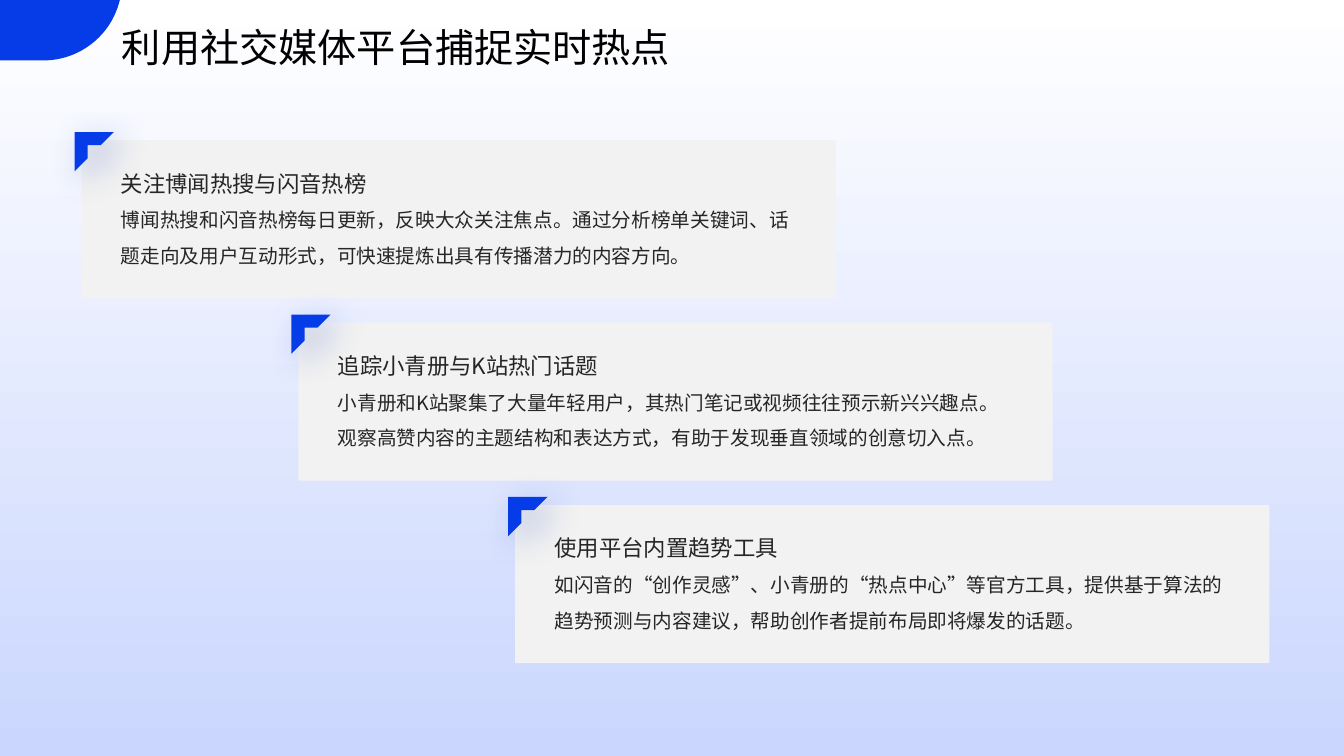
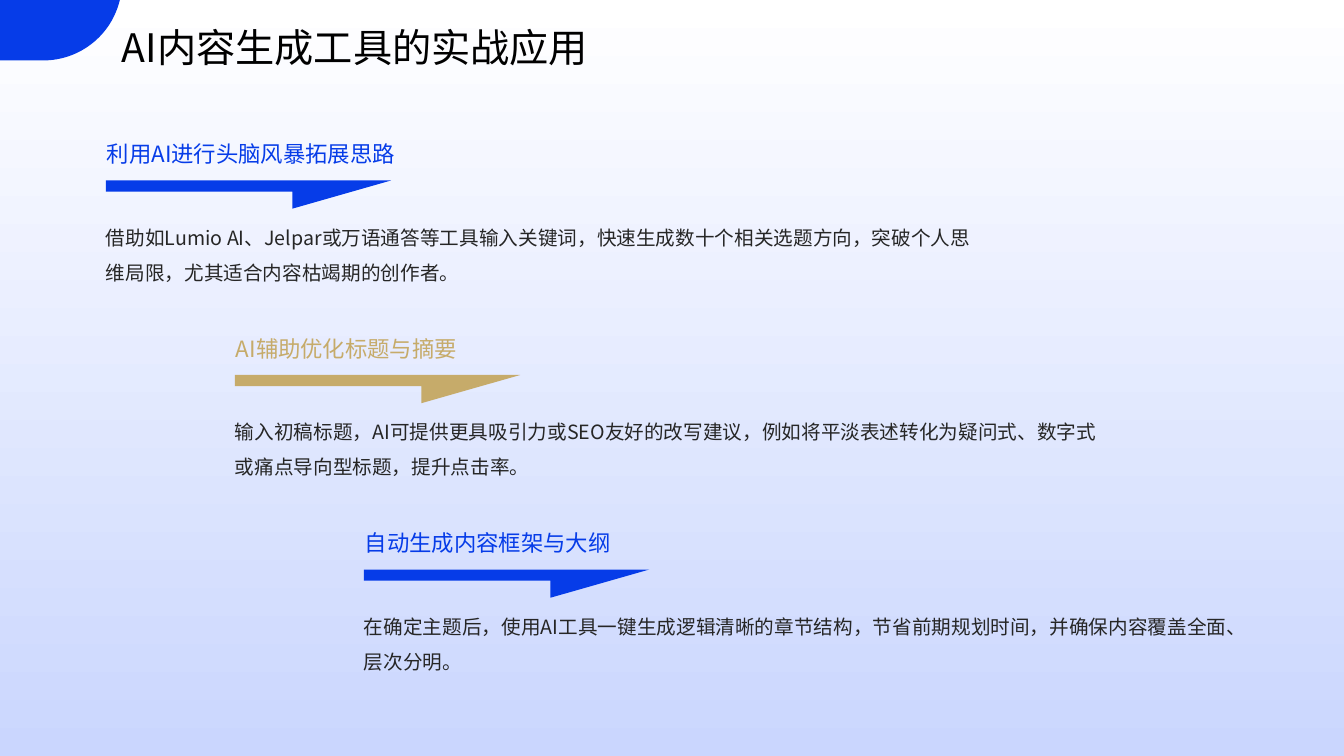
import math

import pptx
import pptx.dml.color
import pptx.enum.shapes
import pptx.enum.text
import pptx.util
from lxml import etree
from pptx.oxml.ns import qn

Inches = pptx.util.Inches
Pt = pptx.util.Pt
Anchor = pptx.enum.text.MSO_ANCHOR
Shape = pptx.enum.shapes.MSO_SHAPE

FONT = "Noto Sans CJK SC"
COLORS = {
    "blue": "063CE8",
    "gold": "C6AB6A",
    "card": "F2F2F2",
    "text": "262626",
    "title": "000000",
    "shade": "052DAE",
    "top": "FFFFFF",
    "base": "CAD6FE",
}

TRENDS = {
    "title": "利用社交媒体平台捕捉实时热点",
    "items": [
        ("关注博闻热搜与闪音热榜",
         "博闻热搜和闪音热榜每日更新，反映大众关注焦点。通过分析榜单关键词、话题走向及用户互动形式，可快速提炼出具有传播潜力的内容方向。"),
        ("追踪小青册与K站热门话题",
         "小青册和K站聚集了大量年轻用户，其热门笔记或视频往往预示新兴兴趣点。观察高赞内容的主题结构和表达方式，有助于发现垂直领域的创意切入点。"),
        ("使用平台内置趋势工具",
         "如闪音的“创作灵感”、小青册的“热点中心”等官方工具，提供基于算法的趋势预测与内容建议，帮助创作者提前布局即将爆发的话题。"),
    ],
}
TOOLS = {
    "title": "AI内容生成工具的实战应用",
    "items": [
        ("利用AI进行头脑风暴拓展思路", "blue",
         "借助如Lumio AI、Jelpar或万语通答等工具输入关键词，快速生成数十个相关选题方向，突破个人思维局限，尤其适合内容枯竭期的创作者。"),
        ("AI辅助优化标题与摘要", "gold",
         "输入初稿标题，AI可提供更具吸引力或SEO友好的改写建议，例如将平淡表述转化为疑问式、数字式或痛点导向型标题，提升点击率。"),
        ("自动生成内容框架与大纲", "blue",
         "在确定主题后，使用AI工具一键生成逻辑清晰的章节结构，节省前期规划时间，并确保内容覆盖全面、层次分明。"),
    ],
}
ARROW = [(0, 0), (2.83, 0), (1.85, 0.28), (1.85, 0.11), (0, 0.11)]


def rgb(name):
    return pptx.dml.color.RGBColor.from_string(COLORS[name])


def paint(shape, color):
    shape.fill.solid()
    shape.fill.fore_color.rgb = rgb(color)
    shape.line.fill.background()
    shape.shadow.inherit = False
    return shape


def write(shape, text, size, color, ratio, anchor):
    frame = shape.text_frame
    frame.word_wrap = True
    frame.auto_size = pptx.enum.text.MSO_AUTO_SIZE.NONE
    frame.vertical_anchor = anchor
    frame.margin_left = frame.margin_right = 0
    frame.margin_top = frame.margin_bottom = 0
    frame.text = text
    para = frame.paragraphs[0]
    para.alignment = pptx.enum.text.PP_ALIGN.LEFT
    para.line_spacing = ratio
    para.space_before = Pt(0)
    font = para.font
    font.size = Pt(size)
    font.color.rgb = rgb(color)
    font.name = FONT
    props = para._p.pPr.find(qn("a:defRPr"))
    etree.SubElement(props, qn("a:ea"), typeface=FONT)


def label(slide, box, text, size, color, ratio, anchor=Anchor.TOP):
    shape = slide.shapes.add_textbox(*map(Inches, box))
    write(shape, text, size, color, ratio, anchor)


def outline(slide, points, color):
    spots = [(Inches(x), Inches(y)) for x, y in points]
    pen = slide.shapes.build_freeform(*spots[0])
    pen.add_line_segments(spots[1:], close=True)
    paint(pen.convert_to_shape(), color)


def corner(slide):
    mid_x, mid_y, radius, steps = 0.43, -0.18, 0.78, 32
    start = math.asin(-mid_y / radius)
    turns = [start + (math.pi / 2 - start) * i / steps for i in range(steps + 1)]
    curve = [(mid_x + radius * math.cos(t), mid_y + radius * math.sin(t))
             for t in turns]
    outline(slide, [(0, 0), *curve, (0, mid_y + radius)], "blue")


def glow(shape):
    effects = shape._element.spPr.find(qn("a:effectLst"))
    shade = etree.SubElement(
        effects, qn("a:outerShdw"), blurRad=str(Pt(25)), dist=str(Pt(10)),
        dir=str(45 * 60000), algn="tl", rotWithShape="0")
    tint = etree.SubElement(shade, qn("a:srgbClr"), val=COLORS["shade"])
    etree.SubElement(tint, qn("a:alpha"), val="30000")


def start(deck, title):
    slide = deck.slides.add_slide(deck.slide_layouts[5])
    head = slide.shapes.title
    head.left, head.top, head.width, head.height = map(
        Inches, (1.21, 0.17, 8.51, 0.54))
    write(head, title, 28, "title", 1.1, Anchor.MIDDLE)
    corner(slide)
    return slide


def card(slide, x, y, head, body):
    def block(kind, box, color):
        return paint(slide.shapes.add_shape(kind, *map(Inches, box)), color)

    block(Shape.RECTANGLE, (x, y, 7.48, 1.57), "card")
    label(slide, (x + 0.39, y + 0.56, 6.69, 0.87), body, 14, "text", 1.5)
    label(slide, (x + 0.39, y + 0.17, 6.69, 0.39), head, 16, "text", 1.3,
          Anchor.BOTTOM)
    glow(block(Shape.HALF_FRAME, (x - 0.07, y - 0.08, 0.39, 0.39), "blue"))


def step(slide, x, y, head, color, body):
    outline(slide, [(x + dx, y + dy) for dx, dy in ARROW], color)
    label(slide, (x, y + 0.33, 8.66, 0.67), body, 14, "text", 1.5)
    label(slide, (x + 0.01, y - 0.48, 8.66, 0.47), head, 16, color, 1.3)


def stairs(deck, data, draw, left, top, across, down):
    slide = start(deck, data["title"])
    for i, item in enumerate(data["items"]):
        draw(slide, left + i * across, top + i * down, *item)


def main():
    deck = pptx.Presentation()
    deck.slide_width, deck.slide_height = Inches(13.33), Inches(7.5)
    back = deck.slide_master.background.fill
    back.gradient()
    back.gradient_angle = 270
    for stop, color in zip(back.gradient_stops, ("top", "base")):
        stop.color.rgb = rgb(color)
    stairs(deck, TRENDS, card, 0.81, 1.39, 2.15, 1.81)
    stairs(deck, TOOLS, step, 1.05, 1.79, 1.28, 1.93)
    deck.save("out.pptx")


if __name__ == "__main__":
    main()
